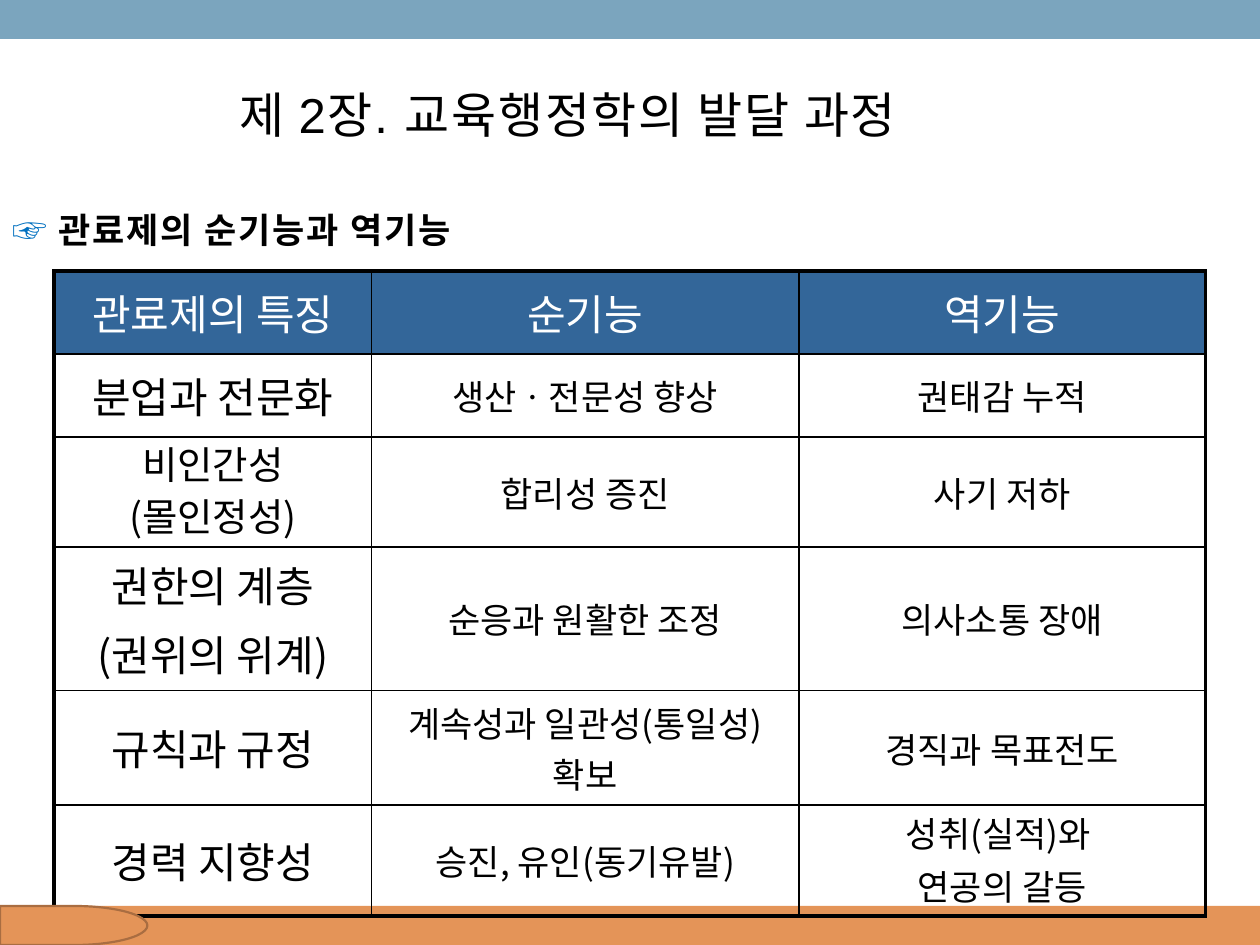
from lxml import etree
from pptx import Presentation
from pptx.dml.color import RGBColor
from pptx.enum import shapes, text
from pptx.oxml.ns import qn
from pptx.util import Inches, Pt

CJK = "Noto Sans CJK KR"
BLACK, WHITE = "000000", "FFFFFF"
NAVY, BLUE, ORANGE = "336699", "7BA5BE", "E49458"
COLUMN_WIDTHS = [2.52, 3.39, 3.23]
ROW_HEIGHTS = [0.66, 0.66, 0.87, 1.14, 0.91, 0.88]
FIRST_COLUMN_SIZES = [24, 24, 22, 24, 24, 24]
LINE_SPACING = {(2, 0): 0.8, (5, 2): 0.9}
ROWS = [
    ["관료제의 특징", "순기능", "역기능"],
    ["분업과 전문화", "생산ㆍ전문성 향상", "권태감 누적"],
    ["비인간성\n(몰인정성)", "합리성 증진", "사기 저하"],
    ["권한의 계층\n(권위의 위계)", "순응과 원활한 조정", "의사소통 장애"],
    ["규칙과 규정", "계속성과 일관성(통일성) 확보", "경직과 목표전도"],
    ["경력 지향성", "승진, 유인(동기유발)", "성취(실적)와 \n연공의 갈등"],
]


def color(value):
    return RGBColor.from_string(value)


def add_text(paragraph, content, size=20, font=CJK, fill=BLACK, bold=False, spacing=0):
    """Append a run; spacing is the extra width per character in points."""
    run = paragraph.add_run()
    run.text = content
    run.font.size = Pt(size)
    run.font.name = font
    run.font.bold = bold
    run.font.color.rgb = color(fill)
    properties = run.font._element
    if spacing:
        properties.set("spc", str(spacing * 100))
    etree.SubElement(properties, qn("a:ea")).set("typeface", CJK)


def add_shape(slide, kind, left, top, width, height, fill, line=None):
    shape = slide.shapes.add_shape(
        kind, Inches(left), Inches(top), Inches(width), Inches(height))
    shape.shadow.inherit = False
    shape.fill.solid()
    shape.fill.fore_color.rgb = color(fill)
    if line:
        shape.line.color.rgb = color(line)
        shape.line.width = Pt(1.25)
    else:
        shape.line.fill.background()


def add_subtitle(slide):
    title = slide.shapes.title
    title.left, title.top = Inches(0), Inches(1.56)
    title.width, title.height = Inches(4.37), Inches(0.53)
    title.text_frame.vertical_anchor = text.MSO_ANCHOR.MIDDLE
    paragraph = title.text_frame.paragraphs[0]
    paragraph.alignment = text.PP_ALIGN.LEFT
    add_text(paragraph, "☞ ", fill="0070C0", spacing=1)
    add_text(paragraph, "관료제의 순기능과 역기능", bold=True, spacing=1)


def add_chapter(slide):
    box = slide.shapes.add_textbox(Inches(1.8), Inches(0.62), Inches(6.33), Inches(0.94))
    box.text_frame.word_wrap = True
    add_text(box.text_frame.paragraphs[0], "제 2장. 교육행정학의 발달 과정",
             size=28, font="Arial", spacing=1)


def set_borders(cell, row, column):
    """Draw thin inner lines and a thick outer frame."""
    on_edge = {
        "L": column == 0,
        "R": column == len(COLUMN_WIDTHS) - 1,
        "T": row == 0,
        "B": row == len(ROWS) - 1,
    }
    properties = cell._tc.get_or_add_tcPr()
    for side, outer in on_edge.items():
        line = etree.SubElement(properties, qn(f"a:ln{side}"))
        line.set("w", str(Pt(2.25 if outer else 1)))
        fill = etree.SubElement(line, qn("a:solidFill"))
        etree.SubElement(fill, qn("a:srgbClr")).set("val", BLACK)


def fill_cell(cell, row, column):
    header = row == 0
    set_borders(cell, row, column)
    if header:
        cell.fill.solid()
        cell.fill.fore_color.rgb = color(NAVY)
    else:
        cell.fill.background()
    cell.vertical_anchor = text.MSO_ANCHOR.MIDDLE
    size = FIRST_COLUMN_SIZES[row] if header or column == 0 else 20
    frame = cell.text_frame
    for index, content in enumerate(ROWS[row][column].split("\n")):
        paragraph = frame.add_paragraph() if index else frame.paragraphs[0]
        paragraph.alignment = text.PP_ALIGN.CENTER
        paragraph.space_before = Pt(round(size * 0.2))
        paragraph.line_spacing = LINE_SPACING.get((row, column))
        add_text(paragraph, content, size=size, fill=WHITE if header else BLACK)


def add_function_table(slide):
    table = slide.shapes.add_table(
        len(ROWS), len(COLUMN_WIDTHS), Inches(0.43), Inches(2.15),
        Inches(sum(COLUMN_WIDTHS)), Inches(sum(ROW_HEIGHTS))).table
    table.horz_banding = False
    for column, width in enumerate(COLUMN_WIDTHS):
        table.columns[column].width = Inches(width)
    for row, height in enumerate(ROW_HEIGHTS):
        table.rows[row].height = Inches(height)
        for column in range(len(COLUMN_WIDTHS)):
            fill_cell(table.cell(row, column), row, column)


def main():
    presentation = Presentation()
    presentation.slide_width, presentation.slide_height = Inches(10), Inches(7.5)
    slide = presentation.slides.add_slide(presentation.slide_layouts[5])
    kinds = shapes.MSO_SHAPE
    add_shape(slide, kinds.RECTANGLE, 0, 7.19, 10, 0.31, ORANGE)
    add_shape(slide, kinds.RECTANGLE, 0, 0, 10, 0.31, BLUE)
    add_subtitle(slide)
    add_function_table(slide)
    add_shape(slide, kinds.FLOWCHART_DELAY, 0, 7.19, 1.17, 0.31, ORANGE, line="A96D41")
    add_chapter(slide)
    presentation.save("out.pptx")


if __name__ == "__main__":
    main()
